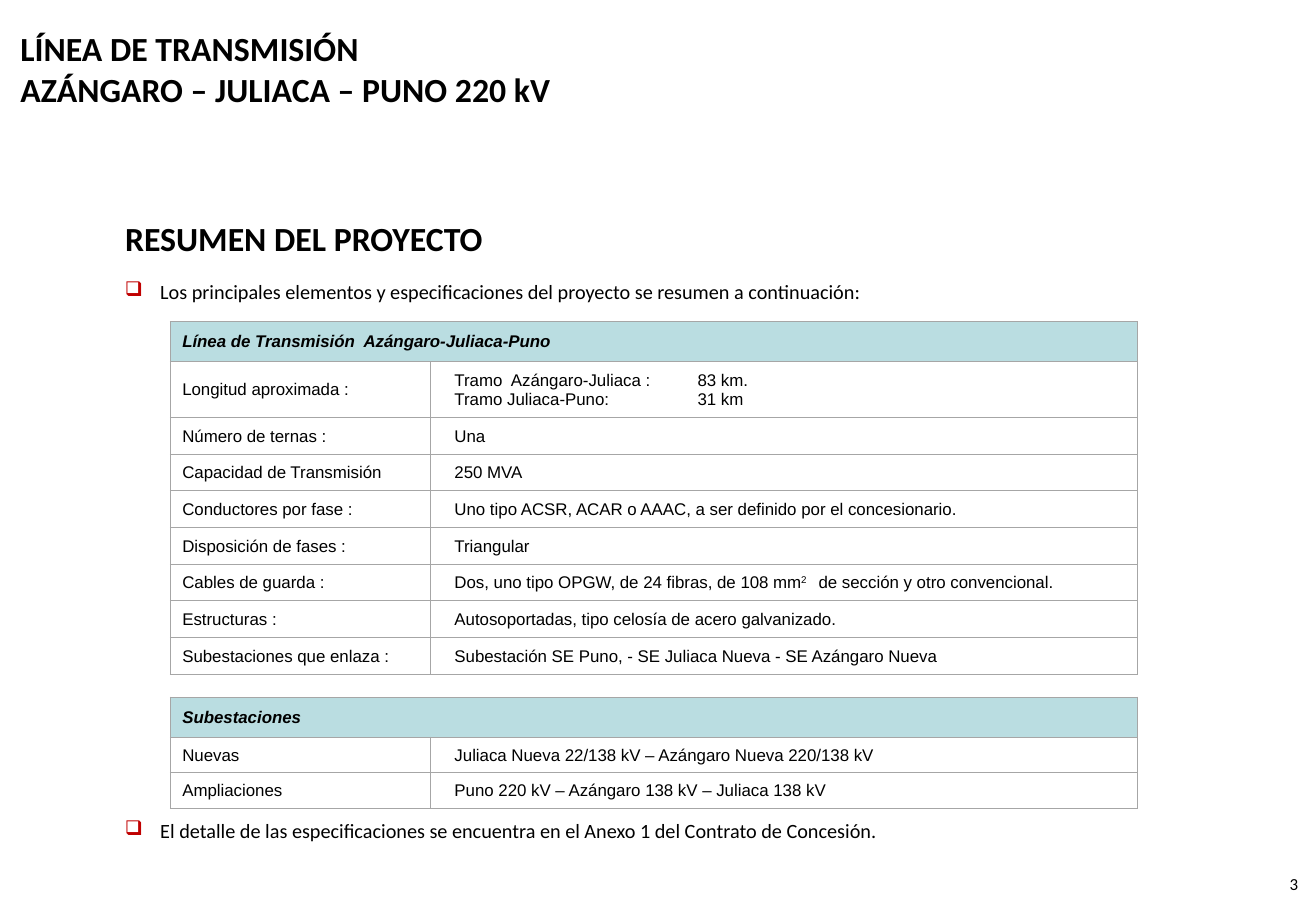
from lxml import etree
from pptx import Presentation
from pptx.dml.color import RGBColor
from pptx.enum.text import MSO_ANCHOR, PP_ALIGN
from pptx.oxml.ns import qn
from pptx.util import Emu, Inches, Pt

MID, TOP = MSO_ANCHOR.MIDDLE, MSO_ANCHOR.TOP
LEFT, RIGHT, JUST = PP_ALIGN.LEFT, PP_ALIGN.RIGHT, PP_ALIGN.JUSTIFY
WIDE, HIGH = Inches(10.83), Inches(7.5)
HEX = {"ink": "000000", "mark": "C00000", "head": "BADDE1", "rule": "A6A6A6"}

HEADING = {"name": "Calibri", "size": Pt(20), "bold": True}
BODY = {"name": "Calibri", "size": Pt(12), "bold": False}
NUMBER = {"name": "Calibri", "size": Pt(10), "bold": False}
CELL = {"name": "Arial", "size": Pt(10), "bold": False, "italic": False}
BAND = {**CELL, "bold": True, "italic": True}

# One name is a band across both columns, two are label and value, none is a gap.
# A value holds lines, and a line holds runs: every second run is raised.
ROWS = [
    (40, "Línea de Transmisión  Azángaro-Juliaca-Puno"),
    (56, "Longitud aproximada :",
     [["Tramo  Azángaro-Juliaca : \t83 km."], ["Tramo Juliaca-Puno: \t31 km"]]),
    (36.7, "Número de ternas :", [["Una"]]),
    (36.7, "Capacidad de Transmisión", [["250 MVA"]]),
    (36.7, "Conductores por fase :",
     [["Uno tipo ACSR, ACAR o AAAC, a ser definido por el concesionario."]]),
    (36.7, "Disposición de fases :", [["Triangular"]]),
    (36.7, "Cables de guarda :",
     [["Dos, uno tipo OPGW, de 24 fibras, de 108 mm", "2 ",
       "  de sección y otro convencional."]]),
    (36.7, "Estructuras :", [["Autosoportadas, tipo celosía de acero galvanizado."]]),
    (36.7, "Subestaciones que enlaza :",
     [["Subestación SE Puno, - SE Juliaca Nueva - SE Azángaro Nueva"]]),
    (23,),
    (40, "Subestaciones"),
    (35.5, "Nuevas", [["Juliaca Nueva 22/138 kV – Azángaro Nueva 220/138 kV"]]),
    (35.5, "Ampliaciones", [["Puno 220 kV – Azángaro 138 kV – Juliaca 138 kV"]]),
    (37,),
]
COLS = (2.14, 5.82)


def area(x, y, w, h):
    """Turn percentages of the slide into a box of lengths."""
    return [Emu(int(part * full / 100))
            for part, full in zip((x, y, w, h), (WIDE, HIGH, WIDE, HIGH))]


def add(parent, tag, **attrs):
    node = etree.SubElement(parent, qn(tag))
    for key, value in attrs.items():
        node.set(key, str(value))
    return node


def style(font, look):
    for key, value in look.items():
        setattr(font, key, value)
    font.color.rgb = RGBColor.from_string(HEX["ink"])


def write(frame, lines, look, align=LEFT):
    """Fill a text frame and return its paragraphs."""
    paras = []
    for num, runs in enumerate(lines):
        para = frame.add_paragraph() if num else frame.paragraphs[0]
        para.alignment = align
        for spot, words in enumerate(runs):
            run = para.add_run()
            run.text = words
            style(run.font, look)
            if spot % 2:
                run.font._element.set("baseline", "30000")
        paras.append(para)
    return paras


def text(slide, box, lines, look, align=LEFT, anchor=TOP):
    frame = slide.shapes.add_textbox(*box).text_frame
    frame.word_wrap = True
    frame.vertical_anchor = anchor
    return write(frame, [[line] for line in lines], look, align)


def title(slide, box):
    lines = ["LÍNEA DE TRANSMISIÓN", "AZÁNGARO – JULIACA – PUNO 220 kV"]
    for para in text(slide, box, lines, HEADING, anchor=MID):
        para._p.get_or_add_pPr().set("marL", str(Inches(0.1)))


def bullet(slide, box, words):
    para, = text(slide, box, [words], BODY, JUST)
    props = para._p.get_or_add_pPr()
    props.set("marL", str(Inches(0.29)))
    props.set("indent", str(-Inches(0.29)))
    add(add(props, "a:buClr"), "a:srgbClr", val=HEX["mark"])
    add(props, "a:buChar", char="❑")


def edges(cell, sides):
    """Rule the given sides of a cell and clear the others."""
    props = cell._tc.get_or_add_tcPr()
    for side in "LRTB":
        line = add(props, "a:ln" + side, w=Pt(0.5))
        if side in sides:
            add(add(line, "a:solidFill"), "a:srgbClr", val=HEX["rule"])
        else:
            add(line, "a:noFill")


def fill(cell, lines, look, pad):
    cell.vertical_anchor = MID
    cell.margin_left = Inches(pad)
    cell.margin_top = cell.margin_right = Inches(0.01)
    cell.margin_bottom = 0
    for para in write(cell.text_frame, lines, look):
        if any("\t" in run.text for run in para.runs):
            stops = add(para._p.get_or_add_pPr(), "a:tabLst")
            add(stops, "a:tab", pos=Inches(2), algn="l")


def blank(cell):
    """Keep an empty cell from growing taller than its row."""
    cell.margin_top = cell.margin_bottom = 0
    add(cell.text_frame.paragraphs[0]._p, "a:endParaRPr", sz=800)


def table(slide, box):
    grid = slide.shapes.add_table(len(ROWS), len(COLS), *box).table
    grid.first_row = grid.horz_banding = False
    for col, share in zip(grid.columns, COLS):
        col.width = int(box[2] * share / sum(COLS))
    total = sum(row[0] for row in ROWS)
    for num, (share, *names) in enumerate(ROWS):
        row = grid.rows[num]
        row.height = int(box[3] * share / total)
        name, value = row.cells
        last = num == len(ROWS) - 1
        for cell in (name, value):
            edges(cell, "LRTB" if names else "T" if last else "TB")
            cell.fill.background()
        if len(names) == 2:
            fill(name, [[names[0]]], CELL, 0.1)
            fill(value, names[1], CELL, 0.2)
            continue
        name.merge(value)
        if names:
            fill(name, [names], BAND, 0.1)
            name.fill.solid()
            name.fill.fore_color.rgb = RGBColor.from_string(HEX["head"])
        else:
            blank(name)
            blank(value)


def main():
    deck = Presentation()
    deck.slide_width, deck.slide_height = WIDE, HIGH
    slide = deck.slides.add_slide(deck.slide_layouts[6])
    text(slide, area(8.59, 22.27, 42.1, 7.73), ["RESUMEN DEL PROYECTO"],
         HEADING, anchor=MID)
    bullet(slide, area(8.59, 30, 65.4, 4.13),
           "Los principales elementos y especificaciones del proyecto "
           "se resumen a continuación:")
    table(slide, area(12.93, 35.28, 73.5, 57.5))
    bullet(slide, area(8.59, 89.2, 65.4, 4.13),
           "El detalle de las especificaciones se encuentra en el Anexo 1 "
           "del Contrato de Concesión.")
    text(slide, area(94.55, 95.2, 5, 4.27), ["3"], NUMBER, RIGHT)
    title(slide, area(-0.28, 1.73, 52.72, 11.6))
    deck.save("out.pptx")


if __name__ == "__main__":
    main()
